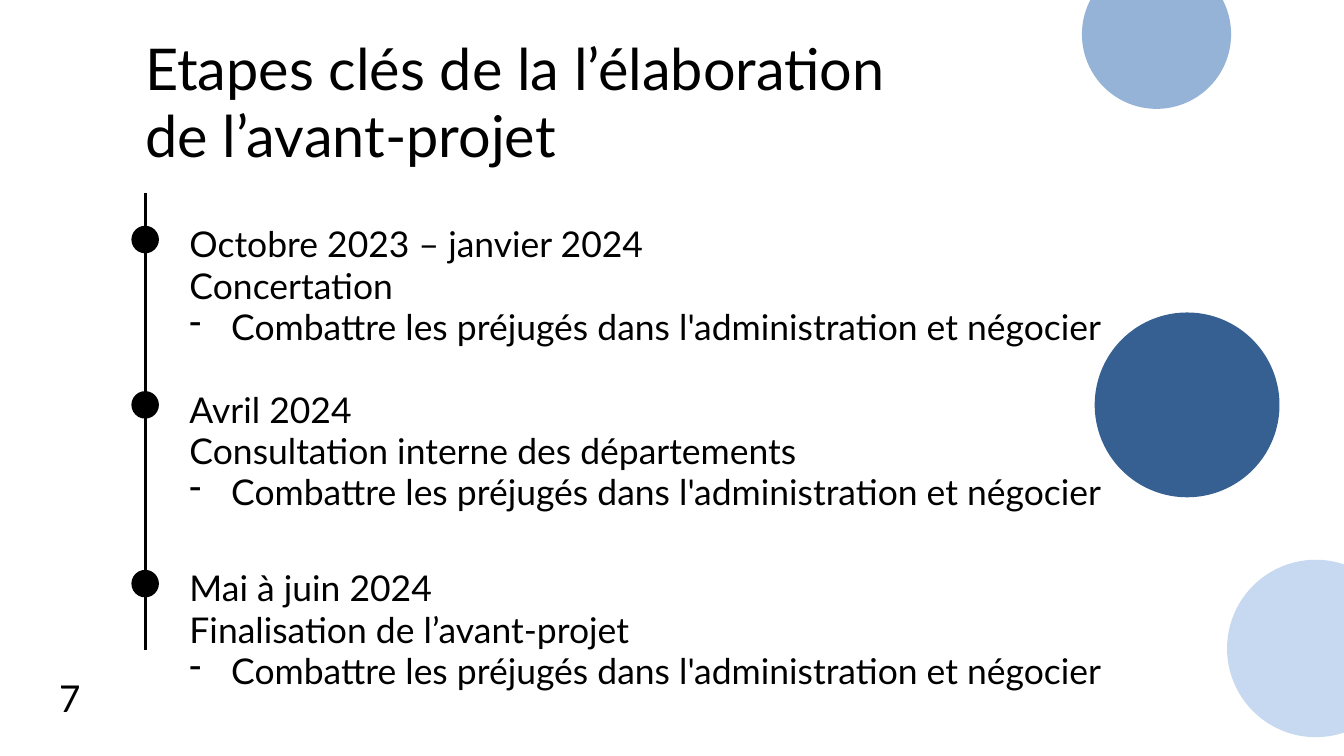
import pptx
import pptx.dml.color
import pptx.enum.shapes
import pptx.oxml
import pptx.oxml.ns
import pptx.util

RGB = pptx.dml.color.RGBColor
BLACK = RGB(0x00, 0x00, 0x00)
PALE_BLUE = RGB(0xC6, 0xD9, 0xF1)
SOFT_BLUE = RGB(0x95, 0xB3, 0xD7)
DEEP_BLUE = RGB(0x37, 0x60, 0x92)

FONT = "Lato"
WIDTH, HEIGHT = pptx.util.Inches(20), pptx.util.Inches(11.25)
COLUMNS = 100  # square grid: rows are as tall as columns are wide

TASK = "Combattre les préjugés dans l'administration et négocier"
STEPS = [  # row, lines
    (16.65, ["Octobre 2023 – janvier 2024", "Concertation"]),
    (28.95, ["Avril 2024", "Consultation interne des départements"]),
    (42.25, ["Mai à juin 2024", "Finalisation de l’avant-projet"]),
]
CIRCLES = [  # column, row, diameter, colour
    (91.3, 41.65, 13.2, PALE_BLUE),
    (80.5, -3, 11.1, SOFT_BLUE),
    (81.45, 23.25, 13.75, DEEP_BLUE),
]


def grid(*cells):
    return [round(c * WIDTH / COLUMNS) for c in cells]


def add_dash(p, indent):
    pPr = p._p.get_or_add_pPr()
    pPr.set("marL", str(indent))
    pPr.set("indent", str(-indent))
    bullet = pptx.oxml.parse_xml(
        f'<a:buChar {pptx.oxml.ns.nsdecls("a")} char="-"/>')
    pPr.append(bullet)


def add_text(slide, box, lines, size, spacing, dashes=()):
    """Write plain lines, then dashed ones, in a box given in grid cells."""
    tf = slide.shapes.add_textbox(*grid(*box)).text_frame
    tf.word_wrap = True
    tf.margin_left = tf.margin_top = tf.margin_right = tf.margin_bottom = 0
    for i, text in enumerate([*lines, *dashes]):
        p = tf.paragraphs[0] if i == 0 else tf.add_paragraph()
        p.line_spacing = pptx.util.Pt(spacing)
        if i >= len(lines):
            add_dash(p, grid(3.1)[0])
        r = p.add_run()
        r.text = text
        r.font.name = FONT
        r.font.size = pptx.util.Pt(size)
        r.font.color.rgb = BLACK


def add_circle(slide, left, top, diameter, color):
    sp = slide.shapes.add_shape(
        pptx.enum.shapes.MSO_SHAPE.OVAL, *grid(left, top, diameter, diameter))
    sp.shadow.inherit = False
    sp.fill.solid()
    sp.fill.fore_color.rgb = color
    sp.line.fill.background()


def add_axis(slide, x, top, bottom):
    line = slide.shapes.add_connector(
        pptx.enum.shapes.MSO_CONNECTOR.STRAIGHT, *grid(x, top, x, bottom))
    line.line.color.rgb = BLACK
    line.line.width = pptx.util.Pt(3)
    line._element.spPr.append(
        pptx.oxml.parse_xml(f'<a:effectLst {pptx.oxml.ns.nsdecls("a")}/>'))


def add_timeline(slide, x, top, width, height):
    """Draw the axis at column x, with a dot and a text for each step."""
    dot, text_gap, text_height = 2.05, 3.3, 9.25
    add_axis(slide, x, top, top + height)
    for row, lines in STEPS:
        add_circle(slide, x - dot / 2, row + 0.15, dot, BLACK)
        add_text(slide, (x + text_gap, row, width - text_gap, text_height),
                 lines, 38, 44.1, dashes=[TASK])


def main():
    prs = pptx.Presentation()
    prs.slide_width, prs.slide_height = WIDTH, HEIGHT
    slide = prs.slides.add_slide(prs.slide_layouts[6])
    for circle in CIRCLES:
        add_circle(slide, *circle)
    add_timeline(slide, 10.8, 14.35, 72.1, 34)
    add_text(slide, (10.8, 2.65, 62.45, 9.95),
             ["Etapes clés de la l’élaboration", "de l’avant-projet"], 61.7, 71.6)
    add_text(slide, (4.4, 49.7, 6.45, 3.7), ["7"], 39.6, 55.5)
    prs.save("out.pptx")


if __name__ == "__main__":
    main()
